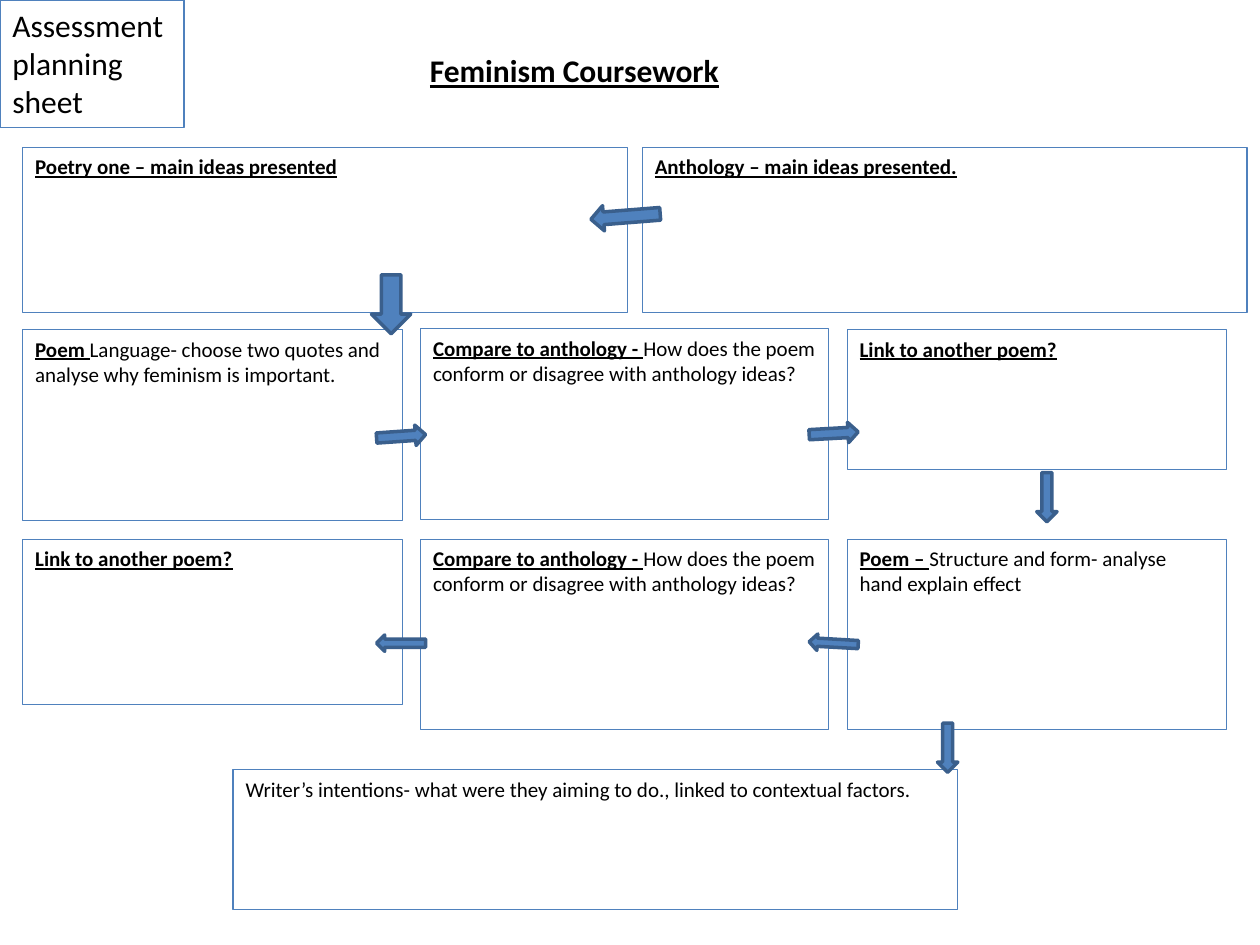
from pptx import Presentation
from pptx.dml.color import RGBColor
from pptx.enum.shapes import MSO_SHAPE
from pptx.enum.text import MSO_ANCHOR, MSO_AUTO_SIZE, PP_ALIGN
from pptx.util import Cm, Pt

BLACK = RGBColor(0x00, 0x00, 0x00)
BLUE = RGBColor(0x4F, 0x81, 0xBD)
DARK_BLUE = RGBColor(0x3A, 0x5F, 0x8C)
FONT = "Calibri"

LEFT_MARGIN, GAP = 0.46, 0.37
OUTER_WIDTH, MIDDLE_WIDTH = 7.65, 8.23
MIDDLE_LEFT = LEFT_MARGIN + OUTER_WIDTH + GAP
RIGHT_LEFT = MIDDLE_LEFT + MIDDLE_WIDTH + GAP
IDEAS_TOP, FIRST_TOP, SECOND_TOP, INTENTIONS_TOP = 2.97, 6.65, 10.87, 15.52
IDEAS_WIDTH = 12.19
LOW, MEDIUM, TALL = 2.82, 3.33, 3.84

COMPARE = ("Compare to anthology - ",
           "How does the poem conform or disagree with anthology ideas?")

# left, top, width, height, underlined heading, plain prompt
PLANNING_BOXES = [
    (LEFT_MARGIN, IDEAS_TOP, IDEAS_WIDTH, MEDIUM,
     "Poetry one – main ideas presented", ""),
    (12.95, IDEAS_TOP, IDEAS_WIDTH, MEDIUM,
     "Anthology – main ideas presented.", ""),
    (LEFT_MARGIN, FIRST_TOP, OUTER_WIDTH, TALL, "Poem ",
     "Language- choose two quotes and analyse why feminism is important."),
    (MIDDLE_LEFT, 6.63, MIDDLE_WIDTH, TALL, *COMPARE),
    (RIGHT_LEFT, FIRST_TOP, OUTER_WIDTH, LOW, "Link to another poem?", ""),
    (LEFT_MARGIN, SECOND_TOP, OUTER_WIDTH, MEDIUM, "Link to another poem?", ""),
    (MIDDLE_LEFT, SECOND_TOP, MIDDLE_WIDTH, TALL, *COMPARE),
    (RIGHT_LEFT, SECOND_TOP, OUTER_WIDTH, TALL, "Poem – ",
     "Structure and form- analyse hand explain effect"),
    (4.7, INTENTIONS_TOP, 14.6, LOW, "",
     "Writer’s intentions- what were they aiming to do., linked to contextual factors."),
]

RIGHT, LEFT, DOWN = MSO_SHAPE.RIGHT_ARROW, MSO_SHAPE.LEFT_ARROW, MSO_SHAPE.DOWN_ARROW

# kind, left, top, width, height, rotation
ARROWS = [
    (RIGHT, 11.91, 4.11, 1.4, 0.51, 175.5),
    (DOWN, 7.49, 5.54, 0.79, 1.19, 0),
    (LEFT, 7.59, 8.59, 0.99, 0.41, 176),
    (LEFT, 16.31, 8.53, 0.99, 0.41, 176.8),
    (DOWN, 20.9, 9.53, 0.41, 0.99, 0),
    (RIGHT, 16.31, 12.8, 0.99, 0.33, 183.3),
    (RIGHT, 7.59, 12.8, 0.99, 0.33, 180),
    (DOWN, 18.9, 14.58, 0.41, 0.99, 0),
]


class PlanningSheet:
    def __init__(self, slide):
        self.slide = slide

    def fill_text(self, frame, heading, prompt, size):
        """Fill a frame with a bold underlined heading and a plain prompt."""
        frame.word_wrap = True
        frame.auto_size = MSO_AUTO_SIZE.NONE
        frame.vertical_anchor = MSO_ANCHOR.TOP
        paragraph = frame.paragraphs[0]
        paragraph.alignment = PP_ALIGN.LEFT
        for text, emphasis in ((heading, True), (prompt, False)):
            if text:
                run = paragraph.add_run()
                run.text = text
                run.font.name = FONT
                run.font.size = Pt(size)
                run.font.color.rgb = BLACK
                run.font.bold = run.font.underline = emphasis

    def title(self, text, left, top, width, height):
        title = self.slide.shapes.title
        title.left, title.top = Cm(left), Cm(top)
        title.width, title.height = Cm(width), Cm(height)
        self.fill_text(title.text_frame, text, "", 18)

    def box(self, left, top, width, height, heading, prompt, size=12):
        box = self.slide.shapes.add_textbox(Cm(left), Cm(top), Cm(width), Cm(height))
        box.line.color.rgb = BLUE
        box.line.width = Pt(0.75)
        self.fill_text(box.text_frame, heading, prompt, size)

    def arrow(self, kind, left, top, width, height, rotation):
        arrow = self.slide.shapes.add_shape(
            kind, Cm(left), Cm(top), Cm(width), Cm(height))
        arrow.rotation = rotation
        arrow.shadow.inherit = False
        arrow.fill.solid()
        arrow.fill.fore_color.rgb = BLUE
        arrow.line.color.rgb = DARK_BLUE
        arrow.line.width = Pt(2)


def main():
    deck = Presentation()
    deck.slide_width, deck.slide_height = Cm(25.4), Cm(19.05)
    title_only = deck.slide_layouts[5]
    sheet = PlanningSheet(deck.slides.add_slide(title_only))

    sheet.title("Feminism Coursework", 8.41, 0.91, 16.99, 1.02)
    sheet.box(0, 0, 3.71, 2.57, "", "Assessment planning sheet", size=18)
    for planning_box in PLANNING_BOXES:
        sheet.box(*planning_box)
    for arrow in ARROWS:
        sheet.arrow(*arrow)

    deck.save("out.pptx")


if __name__ == "__main__":
    main()
